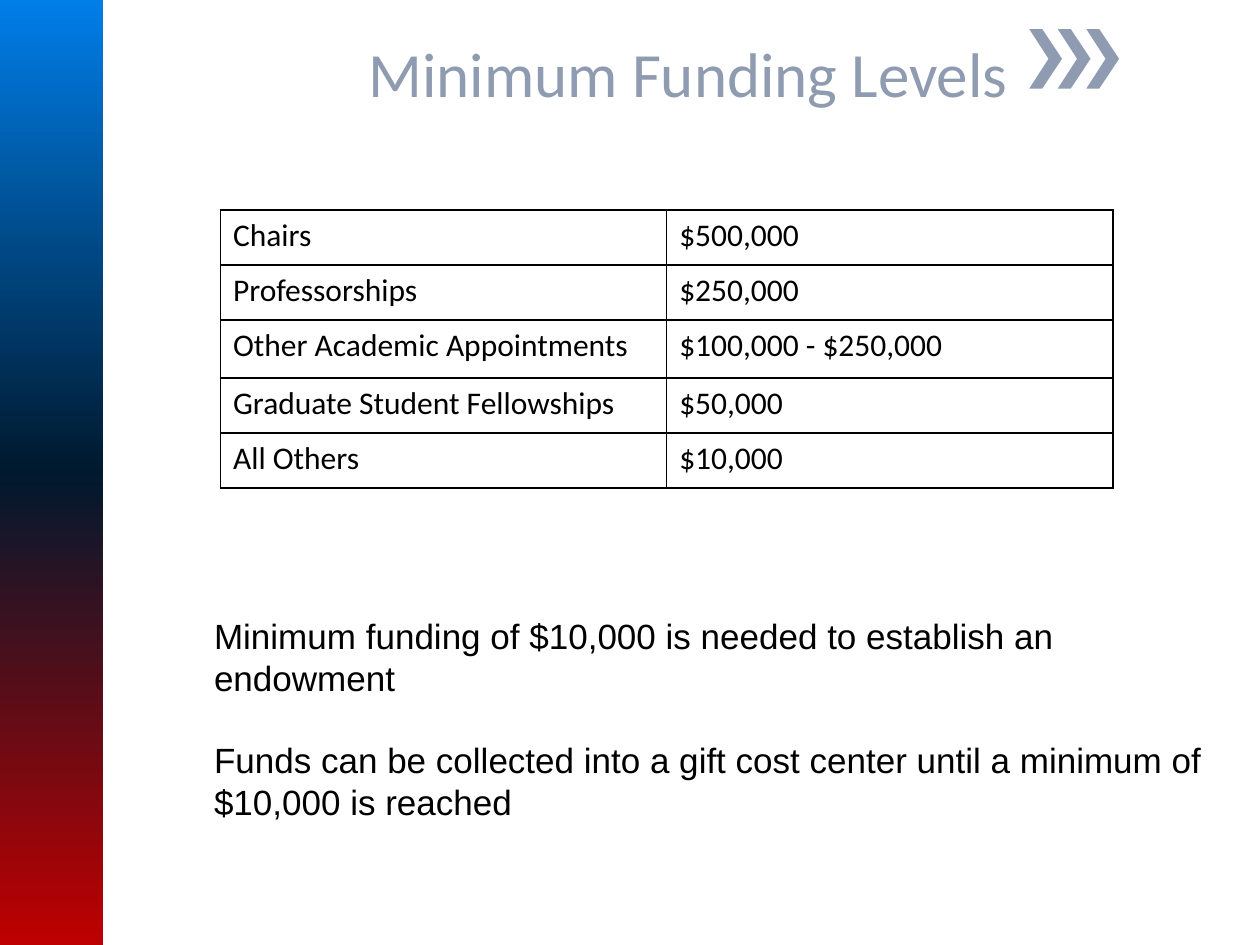
from copy import deepcopy
from dataclasses import dataclass

from lxml import etree
from pptx import Presentation
from pptx.dml.color import RGBColor
from pptx.enum.shapes import MSO_SHAPE
from pptx.enum.text import PP_ALIGN
from pptx.oxml.ns import qn
from pptx.shapes.group import GroupShape
from pptx.slide import Slide
from pptx.table import _Cell
from pptx.text.text import _Paragraph
from pptx.util import Pt

RECTANGLE = MSO_SHAPE.RECTANGLE
LEFT = PP_ALIGN.LEFT
RIGHT = PP_ALIGN.RIGHT

COLORS = {
    "band_top": "007EE8",
    "band_middle": "00192E",
    "band_bottom": "BF0000",
    "accent": "8E9BB0",
    "text": "000000",
    "border": "000000",
}
CHEVRON_OUTLINE = [(7.4, 0), (0, 0), (11, 17), (0, 34), (7.4, 34), (18.7, 17)]
CHEVRON_LEFT, CHEVRON_TOP, CHEVRON_PITCH = 588.2, 16.6, 16.3
ROW_HEIGHTS = [31.5, 31.5, 33, 31.5, 31.5]
COLUMN_WIDTH = 255


@dataclass
class TextBlock:
    left: float
    top: float
    width: float
    height: float
    paragraphs: list[str]
    font: str
    size: float
    color: str
    alignment: PP_ALIGN = LEFT
    top_margin: float = 3.6
    gap: float = 0


@dataclass
class FundingLevel:
    name: str
    amount: str


TEXT_BLOCKS = [
    TextBlock(96, 16, 487, 75, ["Minimum Funding Levels"],
              "Calibri", 36, "accent", RIGHT),
    TextBlock(115.2, 324, 588, 152.6,
              ["Minimum funding of $10,000 is needed to establish an endowment",
               "Funds can be collected into a gift cost center until a minimum of "
               "$10,000 is reached"],
              "Arial", 20, "text", top_margin=27, gap=23),
]

FUNDING_LEVELS = [
    FundingLevel("Chairs", "$500,000"),
    FundingLevel("Professorships", "$250,000"),
    FundingLevel("Other Academic Appointments", "$100,000 - $250,000"),
    FundingLevel("Graduate Student Fellowships", "$50,000"),
    FundingLevel("All Others", "$10,000"),
]


def color_of(name: str) -> RGBColor:
    return RGBColor.from_string(COLORS[name])


def style_paragraph(paragraph: _Paragraph, font: str, size: float, color: str) -> None:
    paragraph.font.name = font
    paragraph.font.size = Pt(size)
    paragraph.font.color.rgb = color_of(color)


def draw_side_band(slide: Slide) -> None:
    band = slide.shapes.add_shape(RECTANGLE, 0, 0, Pt(59.2), Pt(540))
    band.shadow.inherit = False
    band.line.fill.background()
    band.fill.gradient()
    band.fill.gradient_angle = 270
    stop_list = band.element.spPr.find(qn("a:gradFill")).find(qn("a:gsLst"))
    stop_list.append(deepcopy(stop_list[0]))
    names = ["band_top", "band_middle", "band_bottom"]
    for index, (stop, name) in enumerate(zip(band.fill.gradient_stops, names)):
        stop.position = index / 2
        stop.color.rgb = color_of(name)


def draw_chevron(group: GroupShape, left: float, top: float) -> None:
    points = [(Pt(left + x), Pt(top + y)) for x, y in CHEVRON_OUTLINE]
    builder = group.shapes.build_freeform(*points[0])
    builder.add_line_segments(points[1:], close=True)
    chevron = builder.convert_to_shape()
    chevron.shadow.inherit = False
    chevron.fill.solid()
    chevron.fill.fore_color.rgb = color_of("accent")
    chevron.line.fill.background()


def draw_text(slide: Slide, block: TextBlock) -> None:
    text_box = slide.shapes.add_textbox(
        Pt(block.left), Pt(block.top), Pt(block.width), Pt(block.height))
    frame = text_box.text_frame
    frame.word_wrap = True
    frame.margin_top = Pt(block.top_margin)
    frame.text = "\n".join(block.paragraphs)
    for index, paragraph in enumerate(frame.paragraphs):
        paragraph.alignment = block.alignment
        style_paragraph(paragraph, block.font, block.size, block.color)
        if index:
            paragraph.space_before = Pt(block.gap)


def add_borders(cell: _Cell) -> None:
    properties = cell._tc.get_or_add_tcPr()
    for index, side in enumerate(["lnL", "lnR", "lnT", "lnB"]):
        line = etree.Element(qn(f"a:{side}"), w=str(Pt(1)))
        fill = etree.SubElement(line, qn("a:solidFill"))
        etree.SubElement(fill, qn("a:srgbClr"), val=COLORS["border"])
        properties.insert(index, line)


def draw_table(slide: Slide, levels: list[FundingLevel]) -> None:
    frame = slide.shapes.add_table(
        len(levels), 2, Pt(126), Pt(120), Pt(2 * COLUMN_WIDTH), Pt(sum(ROW_HEIGHTS)))
    table = frame.table
    table.first_row = False
    table.horz_banding = False
    for column in table.columns:
        column.width = Pt(COLUMN_WIDTH)
    for row, height, level in zip(table.rows, ROW_HEIGHTS, levels):
        row.height = Pt(height)
        for cell, text in zip(row.cells, (level.name, level.amount)):
            cell.text = text
            style_paragraph(cell.text_frame.paragraphs[0], "Calibri", 18, "text")
            cell.fill.background()
            add_borders(cell)


def main() -> None:
    presentation = Presentation()
    presentation.slide_width = Pt(720)
    presentation.slide_height = Pt(540)
    slide = presentation.slides.add_slide(presentation.slide_layouts[6])
    draw_side_band(slide)
    chevrons = slide.shapes.add_group_shape()
    for index in range(3):
        draw_chevron(chevrons, CHEVRON_LEFT + index * CHEVRON_PITCH, CHEVRON_TOP)
    for block in TEXT_BLOCKS:
        draw_text(slide, block)
    draw_table(slide, FUNDING_LEVELS)
    presentation.save("out.pptx")


if __name__ == "__main__":
    main()
